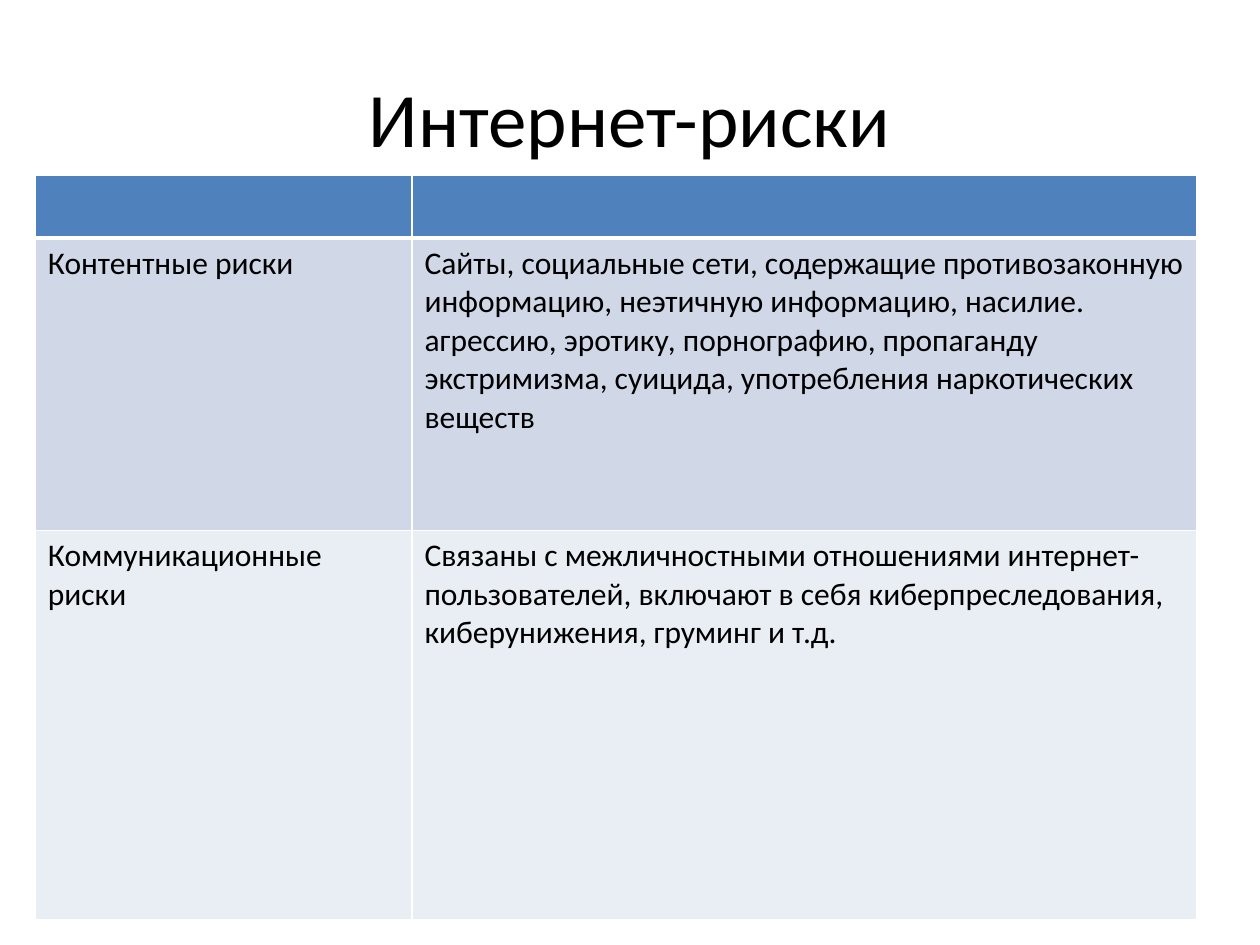
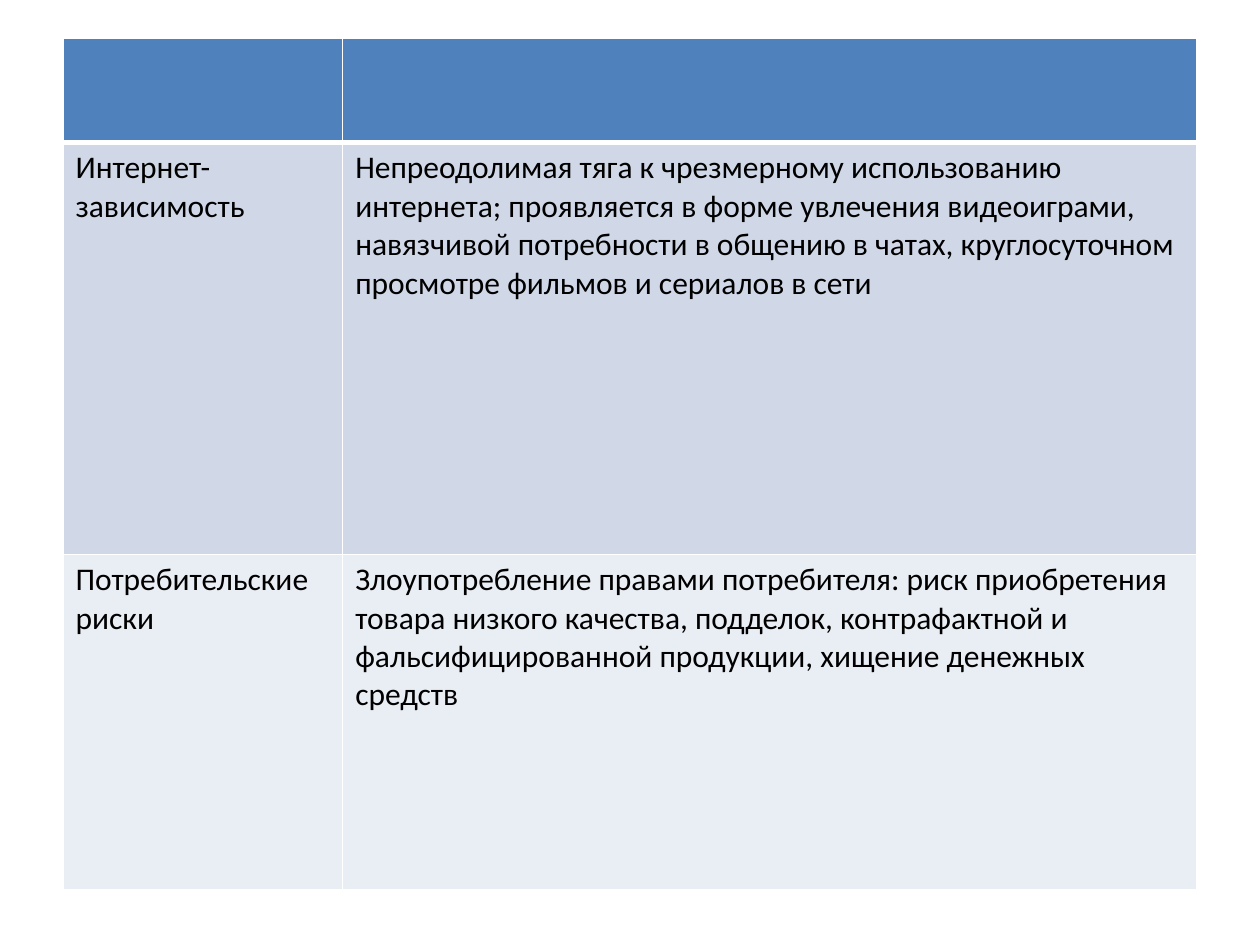
"""Builds two slides with tables of internet risks."""
from typing import NamedTuple

import lxml.etree
import pptx
import pptx.dml.color
import pptx.enum.text
import pptx.oxml.ns
import pptx.presentation
import pptx.slide
import pptx.text.text
import pptx.util

WIDTH = pptx.util.Inches(10)
HEIGHT = pptx.util.Inches(7.5)
FONT = "Calibri"
COLORS = {
    "text": "000000",
    "rule": "FFFFFF",
    "head": "4F81BD",
    "odd": "D0D8E8",
    "even": "E9EDF4",
}
FILLS = ("head", "odd", "even")
THIN, THICK = 1, 3


class Risk(NamedTuple):
    name: str
    about: str


class Grid(NamedTuple):
    left: float
    top: float
    cols: tuple[float, ...]
    rows: tuple[float, ...]
    risks: tuple[Risk, ...]
    title: str = ""


GRIDS = (
    Grid(2.8, 18.53, (29.9, 62.3), (6.67, 30.93, 41.2), (
        Risk("Контентные риски",
             "Сайты, социальные сети, содержащие противозаконную информацию, "
             "неэтичную информацию, насилие. агрессию, эротику, порнографию, "
             "пропаганду экстримизма, суицида, употребления наркотических веществ"),
        Risk("Коммуникационные риски",
             "Связаны с межличностными отношениями интернет-пользователей, "
             "включают в себя киберпреследования, киберунижения, груминг и т.д."),
    ), "Интернет-риски"),
    Grid(5, 4, (22.2, 67.8), (11.07, 43.6, 35.47), (
        Risk("Интернет-зависимость",
             "Непреодолимая тяга к чрезмерному использованию интернета; "
             "проявляется в форме увлечения видеоиграми, навязчивой потребности "
             "в общению в чатах, круглосуточном просмотре фильмов и сериалов в сети"),
        Risk("Потребительские риски",
             "Злоупотребление правами потребителя: риск приобретения товара "
             "низкого качества, подделок, контрафактной и фальсифицированной "
             "продукции, хищение денежных средств"),
    )),
)


def across(share: float) -> int:
    return round(WIDTH * share / 100)


def down(share: float) -> int:
    return round(HEIGHT * share / 100)


def color(name: str) -> pptx.dml.color.RGBColor:
    return pptx.dml.color.RGBColor.from_string(COLORS[name])


def write(frame: pptx.text.text.TextFrame, text: str, size: int) -> None:
    frame.text = text
    font = frame.paragraphs[0].font
    font.name, font.size = FONT, pptx.util.Pt(size)
    font.color.rgb = color("text")


def add_title(slide: pptx.slide.Slide, text: str) -> None:
    box = slide.shapes.add_textbox(across(5), down(4), across(90), down(16.67))
    frame = box.text_frame
    frame.word_wrap = True
    frame.vertical_anchor = pptx.enum.text.MSO_ANCHOR.MIDDLE
    write(frame, text, 44)
    frame.paragraphs[0].alignment = pptx.enum.text.PP_ALIGN.CENTER


def add_rules(cell, row: int) -> None:
    qn = pptx.oxml.ns.qn
    props = cell._tc.get_or_add_tcPr()
    thick = {(0, "B"), (1, "T")}
    for side in "LRTB":
        width = THICK if (row, side) in thick else THIN
        line = lxml.etree.SubElement(
            props, qn(f"a:ln{side}"), w=str(pptx.util.Pt(width)))
        fill = lxml.etree.SubElement(line, qn("a:solidFill"))
        lxml.etree.SubElement(fill, qn("a:srgbClr"), val=COLORS["rule"])


def add_grid(slide: pptx.slide.Slide, grid: Grid) -> None:
    table = slide.shapes.add_table(
        len(grid.rows), len(grid.cols), across(grid.left), down(grid.top),
        across(sum(grid.cols)), down(sum(grid.rows))).table
    for col, share in zip(table.columns, grid.cols):
        col.width = across(share)
    texts = (Risk("", ""), *grid.risks)
    for r, (share, risk, fill) in enumerate(zip(grid.rows, texts, FILLS)):
        table.rows[r].height = down(share)
        for c, text in enumerate(risk):
            cell = table.cell(r, c)
            add_rules(cell, r)
            cell.fill.solid()
            cell.fill.fore_color.rgb = color(fill)
            if text:
                write(cell.text_frame, text, 18)


def add_slide(deck: pptx.presentation.Presentation, grid: Grid) -> None:
    slide = deck.slides.add_slide(deck.slide_layouts[6])
    if grid.title:
        add_title(slide, grid.title)
    add_grid(slide, grid)


def main() -> None:
    deck = pptx.Presentation()
    deck.slide_width, deck.slide_height = WIDTH, HEIGHT
    for grid in GRIDS:
        add_slide(deck, grid)
    deck.save("out.pptx")


if __name__ == "__main__":
    main()
